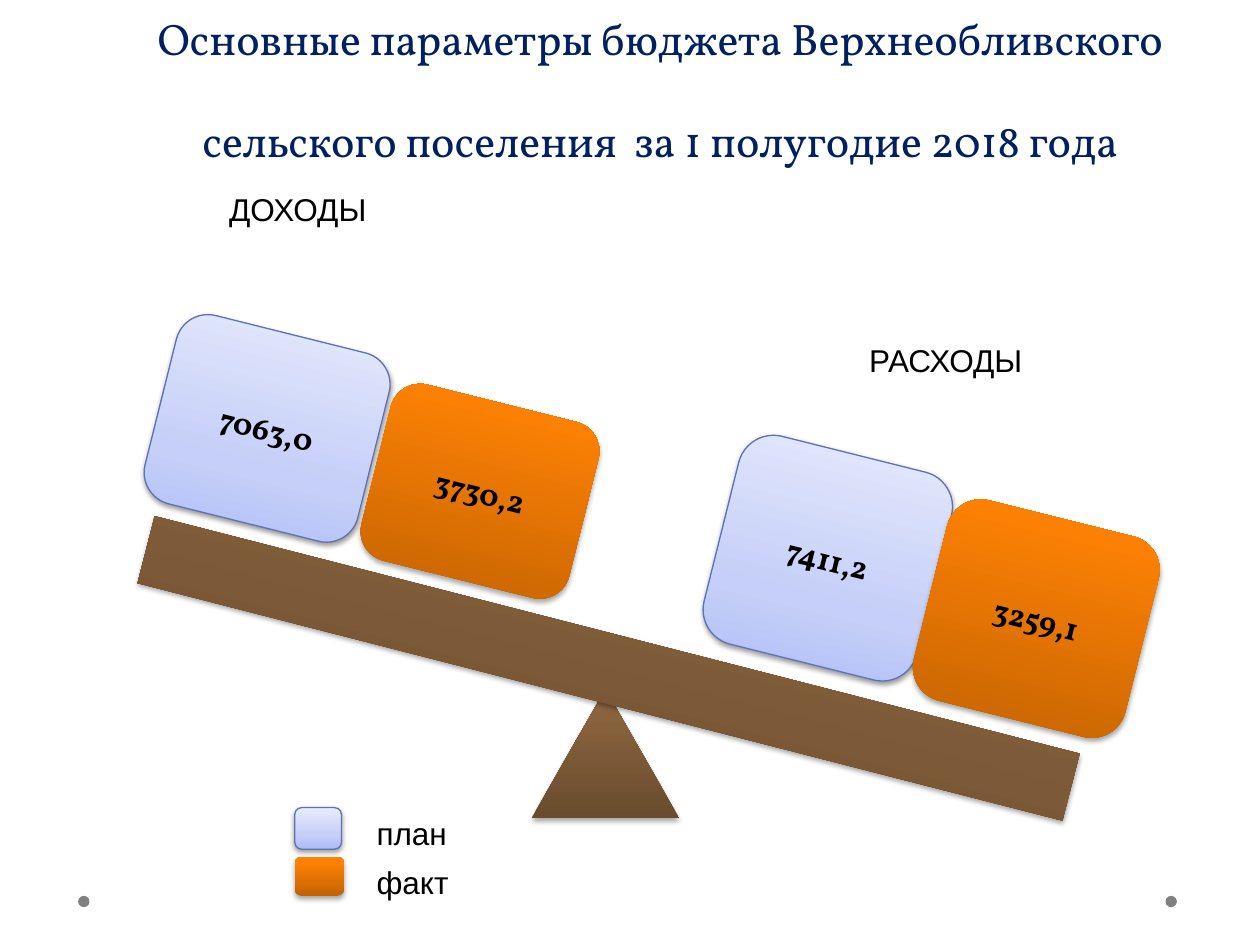
from lxml import etree
from pptx import Presentation
from pptx.dml.color import RGBColor
from pptx.enum.shapes import MSO_SHAPE
from pptx.enum.text import MSO_ANCHOR, MSO_AUTO_SIZE, PP_ALIGN
from pptx.oxml.ns import qn
from pptx.util import Inches, Pt

OVAL = MSO_SHAPE.OVAL
RECTANGLE = MSO_SHAPE.RECTANGLE
ROUNDED = MSO_SHAPE.ROUNDED_RECTANGLE
TRIANGLE = MSO_SHAPE.ISOSCELES_TRIANGLE
TOP, MIDDLE, BOTTOM = MSO_ANCHOR.TOP, MSO_ANCHOR.MIDDLE, MSO_ANCHOR.BOTTOM
LEFT, CENTER = PP_ALIGN.LEFT, PP_ALIGN.CENTER
NO_AUTOFIT = MSO_AUTO_SIZE.NONE

SLIDE_WIDTH, SLIDE_HEIGHT = 10, 7.5
TITLE = ("Основные параметры бюджета Верхнеобливского "
         "сельского поселения  за 1 полугодие 2018 года")
TITLE_BOX = (0.59, 0, 8.95, 1.37)
STYLES = {
    "plan": {"stops": [(0, "ADBBF6"), (35, "C5CFF8"), (100, "E8ECFD")],
             "line": "5C72B2", "shadow": (38, 1.6)},
    "fact": {"stops": [(0, "C26203"), (80, "FB8004"), (100, "FF8002")],
             "line": None, "shadow": (35, 1.8)},
    "wood": {"stops": [(0, "694C2F"), (80, "89633D"), (100, "8B633C")],
             "line": None, "shadow": (35, 1.8)},
}
FULCRUM = (4.22, 5.47, 1.17, 1.02)
BEAM = (1.04, 5.03, 7.58, 0.55)
BEAM_TILT, WEIGHT_TILT = 14.4, 14
WEIGHTS = [
    ("7063,0", "plan", (1.25, 2.63, 1.74, 1.54)),
    ("3730,2", "fact", (2.96, 3.18, 1.7, 1.44)),
    ("7411,2", "plan", (5.7, 3.58, 1.74, 1.7)),
    ("3259,1", "fact", (7.36, 4.09, 1.73, 1.64)),
]
LABELS = [("ДОХОДЫ", (1.72, 1.46, 1.8, 0.4)), ("РАСХОДЫ", (6.8, 2.66, 1.64, 0.4))]
LEGEND = [("план", "plan", (0.37, 0.33)), ("факт", "fact", (0.39, 0.31))]
LEGEND_LEFT, LEGEND_TOP, LEGEND_ROW, LEGEND_TEXT_LEFT = 2.34, 6.41, 0.39, 2.89
DOT_LEFTS, DOT_TOP, DOT_SIZE = (0.62, 9.25), 7.11, 0.09


def color(value):
    return RGBColor.from_string(value)


def add_run(paragraph, text, size, font, fill, bold=False):
    run = paragraph.add_run()
    run.text = text
    run.font.size = Pt(size)
    run.font.name = font
    run.font.bold = bold
    run.font.color.rgb = color(fill)


def add_color_element(parent, value, alpha=None):
    element = etree.SubElement(parent, qn("a:srgbClr"), val=value)
    if alpha is not None:
        etree.SubElement(element, qn("a:alpha"), val=str(alpha * 1000))


def set_gradient(shape, stops):
    shape.fill.gradient()
    shape.fill.gradient_angle = 90
    stop_list = shape._element.spPr.find(".//" + qn("a:gsLst"))
    for old_stop in list(stop_list):
        stop_list.remove(old_stop)
    for position, value in stops:
        stop = etree.SubElement(stop_list, qn("a:gs"), pos=str(position * 1000))
        add_color_element(stop, value)


def set_shadow(shape, alpha, distance):
    shape.shadow.inherit = False
    effects = shape._element.spPr.find(qn("a:effectLst"))
    shadow = etree.SubElement(effects, qn("a:outerShdw"), blurRad=str(Pt(3.1)),
                              dist=str(Pt(distance)), dir="5400000", rotWithShape="0")
    add_color_element(shadow, "000000", alpha)


def add_styled_shape(slide, kind, box, style_name, tilt=0):
    style = STYLES[style_name]
    shape = slide.shapes.add_shape(kind, *map(Inches, box))
    shape.rotation = tilt
    set_gradient(shape, style["stops"])
    if style["line"]:
        shape.line.color.rgb = color(style["line"])
        shape.line.width = Pt(0.75)
    else:
        shape.line.fill.background()
    set_shadow(shape, *style["shadow"])
    return shape


def add_weight(slide, text, style_name, box):
    shape = add_styled_shape(slide, ROUNDED, box, style_name, WEIGHT_TILT)
    shape.text_frame.vertical_anchor = MIDDLE
    paragraph = shape.text_frame.paragraphs[0]
    paragraph.alignment = CENTER
    add_run(paragraph, text, 18, "Vollkorn", "000000", True)


def add_label(slide, text, box):
    frame = slide.shapes.add_textbox(*map(Inches, box)).text_frame
    frame.word_wrap = True
    frame.vertical_anchor = TOP
    paragraph = frame.paragraphs[0]
    paragraph.alignment = LEFT
    add_run(paragraph, text, 18, "Arial", "000000")


def add_dot(slide, left):
    dot = slide.shapes.add_shape(OVAL, *map(Inches, (left, DOT_TOP, DOT_SIZE, DOT_SIZE)))
    dot.fill.solid()
    dot.fill.fore_color.rgb = color("808080")
    dot.line.fill.background()
    dot.shadow.inherit = False


def format_title(slide):
    title = slide.shapes.title
    title.left, title.top, title.width, title.height = map(Inches, TITLE_BOX)
    frame = title.text_frame
    frame.word_wrap = True
    frame.auto_size = NO_AUTOFIT
    frame.vertical_anchor = BOTTOM
    paragraph = frame.paragraphs[0]
    paragraph.alignment = CENTER
    paragraph.line_spacing = Pt(58)
    paragraph.space_before = Pt(0)
    properties = paragraph._p.get_or_add_pPr()
    properties.set("marL", str(Inches(0.35)))
    properties.set("indent", "0")
    add_run(paragraph, TITLE, 25.2, "Vollkorn", "002060")


def main():
    presentation = Presentation()
    presentation.slide_width = Inches(SLIDE_WIDTH)
    presentation.slide_height = Inches(SLIDE_HEIGHT)
    slide = presentation.slides.add_slide(presentation.slide_layouts.get_by_name("Title Only"))
    format_title(slide)
    for left in DOT_LEFTS:
        add_dot(slide, left)
    add_styled_shape(slide, TRIANGLE, FULCRUM, "wood")
    for text, style_name, box in WEIGHTS:
        add_weight(slide, text, style_name, box)
    add_styled_shape(slide, RECTANGLE, BEAM, "wood", BEAM_TILT)
    for text, box in LABELS:
        add_label(slide, text, box)
    for row, (text, style_name, size) in enumerate(LEGEND):
        top = LEGEND_TOP + row * LEGEND_ROW
        add_styled_shape(slide, ROUNDED, (LEGEND_LEFT, top, *size), style_name)
        add_label(slide, text, (LEGEND_TEXT_LEFT, top, 0.94, 0.4))
    presentation.save("out.pptx")


if __name__ == "__main__":
    main()
